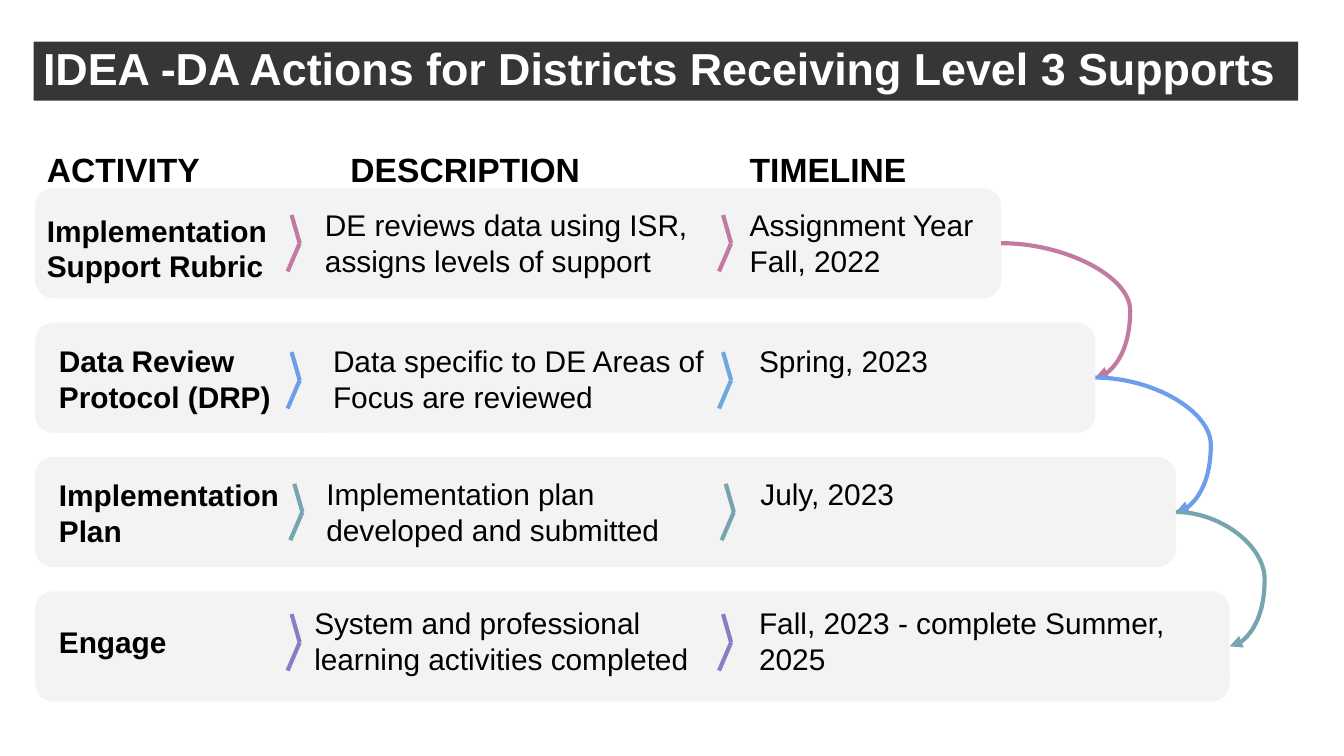
from typing import NamedTuple

from lxml import etree
from pptx import Presentation
from pptx import util as u
from pptx.dml.color import RGBColor
from pptx.enum import shapes, text
from pptx.oxml.ns import qn

HUES = {
    "ink": "000000", "white": "FFFFFF", "dark": "363636", "pale": "F3F3F3",
    "rose": "C27BA0", "blue": "6D9EEB", "sky": "6FA8DC",
    "teal": "76A5AF", "plum": "8E7CC3",
}
WIDE = u.Inches(10)
LEFT, TOP, STEP, HIGH = 0.26, 1.4, 1.0, 0.82
CELL = 0.75
BEND = 0.26


class Cell(NamedTuple):
    x: float
    y: float
    w: float
    words: str


class Row(NamedTuple):
    wide: float
    task: Cell
    note: Cell
    date: Cell
    mark: tuple[float, float]
    hues: tuple[str, str]


HEADS = [
    Cell(0.25, 1.01, 1.89, "ACTIVITY"),
    Cell(2.51, 1.01, 2.23, "DESCRIPTION"),
    Cell(5.48, 1.01, 1.82, "TIMELINE"),
]
ROWS = [
    Row(7.19,
        Cell(0.25, 1.47, 1.95, "Implementation\nSupport Rubric"),
        Cell(2.32, 1.44, 3.16, "DE reviews data using ISR, assigns levels of support"),
        Cell(5.48, 1.44, 1.95, "Assignment Year\nFall, 2022"),
        (2.14, 1.6), ("rose", "rose")),
    Row(7.89,
        Cell(0.34, 2.44, 1.82, "Data Review Protocol (DRP)"),
        Cell(2.38, 2.45, 3.1, "Data specific to DE Areas of Focus are reviewed"),
        Cell(5.55, 2.45, 1.95, "Spring, 2023"),
        (2.14, 2.62), ("blue", "sky")),
    Row(8.49,
        Cell(0.34, 3.44, 1.89, "Implementation\nPlan"),
        Cell(2.33, 3.44, 3.16, "Implementation plan developed and submitted"),
        Cell(5.56, 3.44, 1.95, "July, 2023"),
        (2.16, 3.6), ("teal", "teal")),
    Row(8.89,
        Cell(0.34, 4.4, 1.82, "Engage"),
        Cell(2.24, 4.4, 3.26, "System and professional\nlearning activities completed"),
        Cell(5.55, 4.4, 3.33, "Fall, 2023 - complete Summer, 2025"),
        (2.14, 4.57), ("plum", "plum")),
]


def tint(hue: str) -> RGBColor:
    return RGBColor.from_string(HUES[hue])


def apply(item, form: dict) -> None:
    for name, value in form.items():
        setattr(item, name, value)


def write(shape, words: str, size: int, bold: bool, hue: str = "ink",
          pad: tuple[float, float] = (0.1, 0.1), mid: bool = False, **para) -> None:
    frame = shape.text_frame
    side, edge = map(u.Inches, pad)
    frame.text = words
    apply(frame, {
        "word_wrap": True, "auto_size": text.MSO_AUTO_SIZE.NONE,
        "margin_left": side, "margin_right": side,
        "margin_top": edge, "margin_bottom": edge,
        "vertical_anchor": text.MSO_ANCHOR.MIDDLE if mid else text.MSO_ANCHOR.TOP,
    })
    for line in frame.paragraphs:
        apply(line, {"alignment": text.PP_ALIGN.LEFT, **para})
        for run in line.runs:
            apply(run.font, {"name": "Arial", "size": u.Pt(size), "bold": bold})
            run.font.color.rgb = tint(hue)


def label(slide, cell: Cell, high: float, size: int, bold: bool,
          mid: bool = False) -> None:
    box = slide.shapes.add_textbox(*map(u.Inches, (cell.x, cell.y, cell.w, high)))
    write(box, cell.words, size, bold, mid=mid)


def link(slide, kind, start: tuple[float, float], end: tuple[float, float], hue: str):
    line = slide.shapes.add_connector(kind, *map(u.Inches, (*start, *end)))
    line.line.color.rgb = tint(hue)
    line.line.width = u.Pt(2.25)
    etree.SubElement(line.element.spPr, qn("a:effectLst"))
    return line


def chevron(slide, x: float, y: float, hue: str) -> None:
    tip = (x + 0.09, y + 0.21)
    for start, end in (((x + 0.03, y), tip), (tip, (x, y + 0.42))):
        link(slide, shapes.MSO_CONNECTOR.STRAIGHT, start, end, hue)


def curve(slide, start: tuple[float, float], end: tuple[float, float], hue: str) -> None:
    line = link(slide, shapes.MSO_CONNECTOR.CURVE, start, end, hue)
    span = end[0] - start[0]
    guides = line.element.spPr.find(qn("a:prstGeom")).find(qn("a:avLst"))
    ratio = round((span + BEND) / span * 100000)
    etree.SubElement(guides, qn("a:gd"), name="adj1", fmla=f"val {ratio}")
    etree.SubElement(line.line._get_or_add_ln(), qn("a:tailEnd"), type="triangle")


def band(slide, top: float, row: Row) -> None:
    card = slide.shapes.add_shape(
        shapes.MSO_SHAPE.FLOWCHART_ALTERNATE_PROCESS,
        *map(u.Inches, (LEFT, top, row.wide, HIGH)))
    card.shadow.inherit = False
    card.fill.solid()
    card.fill.fore_color.rgb = tint("pale")
    card.line.fill.background()
    label(slide, row.task, CELL, 16, True, mid=True)
    for cell in (row.note, row.date):
        label(slide, cell, CELL, 16, False)
    x, y = row.mark
    for shift, hue in zip((0, 3.21), row.hues):
        chevron(slide, x + shift, y, hue)


def main() -> None:
    deck = Presentation()
    apply(deck, {"slide_width": WIDE, "slide_height": WIDE * 9 // 16})
    slide = deck.slides.add_slide(deck.slide_layouts[5])

    title = slide.shapes.title
    apply(title, {"left": u.Inches(0.25), "top": u.Inches(0.31),
                  "width": u.Inches(9.41), "height": u.Inches(0.44)})
    title.fill.solid()
    title.fill.fore_color.rgb = tint("dark")
    write(title, "IDEA -DA Actions for Districts Receiving Level 3 Supports",
          24, True, "white", (0.07, 0.04), True, line_spacing=0.9,
          space_before=u.Pt(5), space_after=u.Pt(5))

    for place, row in enumerate(ROWS):
        band(slide, TOP + place * STEP, row)
    for head in HEADS:
        label(slide, head, 0.39, 18, True)

    ends = [(LEFT + row.wide, TOP + place * STEP + HIGH / 2)
            for place, row in enumerate(ROWS)]
    for start, end, row in zip(ends, ends[1:], ROWS):
        curve(slide, start, end, row.hues[0])

    deck.save("out.pptx")


if __name__ == "__main__":
    main()
